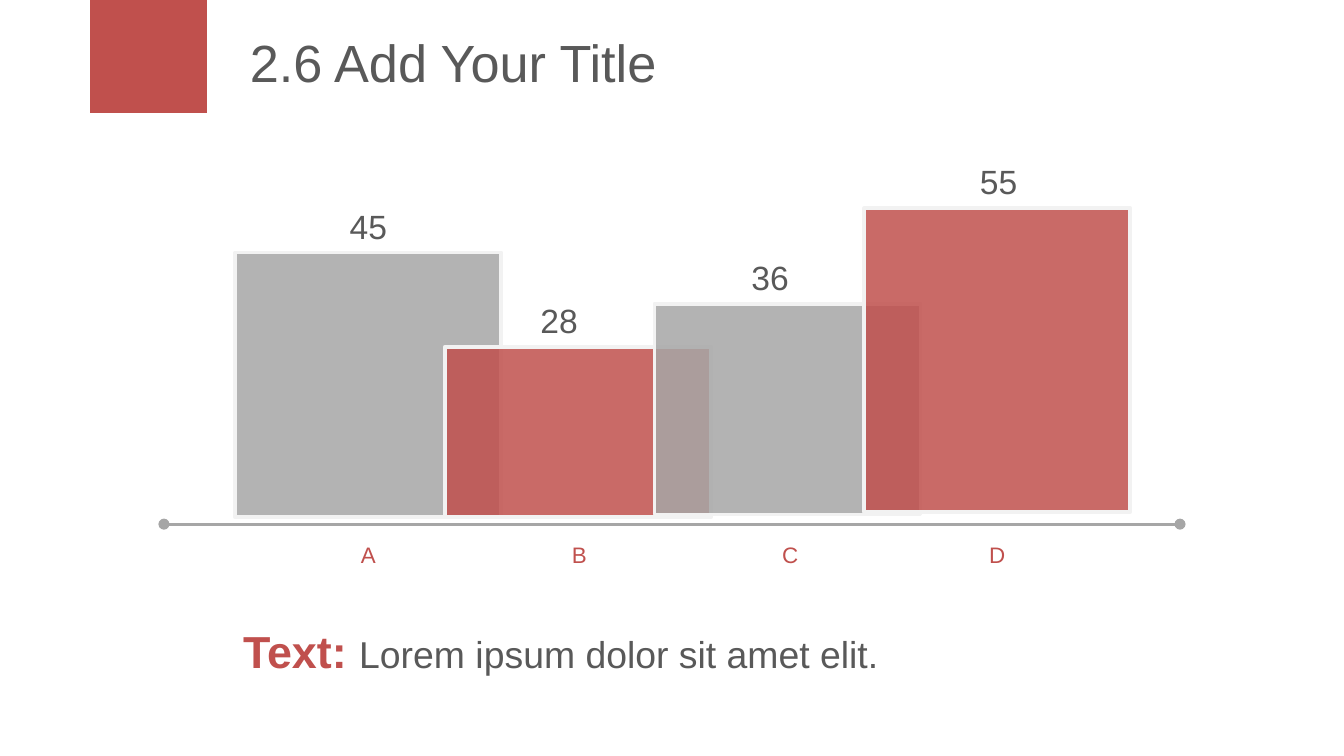
from lxml.etree import SubElement
from pptx import Presentation
from pptx.dml.color import RGBColor
from pptx.enum.shapes import MSO_CONNECTOR, MSO_SHAPE
from pptx.enum.text import MSO_ANCHOR, MSO_AUTO_SIZE, PP_ALIGN
from pptx.oxml.ns import qn
from pptx.util import Inches, Pt

RED = RGBColor(0xC0, 0x50, 0x4D)
GRAY = RGBColor(0xA6, 0xA6, 0xA6)
DARK = RGBColor(0x59, 0x59, 0x59)
PALE = RGBColor(0xF2, 0xF2, 0xF2)

BAR_LEFT, BAR_STEP, BAR_WIDTH = 1.75, 1.56, 1.98
LABEL_WIDTH, LABEL_HEIGHT = 1.08, 0.4
AXIS_Y = 3.9

# letter, letter left, value, value left, bar top, bar height, colour
BARS = [
    ("A", 2.58, "45", 2.2, 1.88, 1.97, GRAY),
    ("B", 4.15, "28", 3.62, 2.58, 1.27, RED),
    ("C", 5.72, "36", 5.19, 2.26, 1.57, GRAY),
    ("D", 7.26, "55", 6.89, 1.55, 2.26, RED),
]


class SlideBuilder:
    font = "Arial"

    def __init__(self, page):
        self.page = page

    def add_run(self, para, text, size, color, bold=False):
        span = para.add_run()
        span.text = text
        span.font.name = self.font
        span.font.size = Pt(size)
        span.font.bold = bold
        span.font.color.rgb = color

    def title(self, text, left, top, width, height):
        box = self.page.shapes.title
        box.left, box.top = Inches(left), Inches(top)
        box.width, box.height = Inches(width), Inches(height)
        box.text_frame.vertical_anchor = MSO_ANCHOR.MIDDLE
        para = box.text_frame.paragraphs[0]
        para.alignment = PP_ALIGN.LEFT
        self.add_run(para, text, 28, DARK)

    def rectangle(self, left, top, width, height, color, opacity=None):
        """Draw a plain block, or a pale-edged one when an opacity in percent is given."""
        box = self.page.shapes.add_shape(
            MSO_SHAPE.RECTANGLE, Inches(left), Inches(top), Inches(width), Inches(height))
        box.shadow.inherit = False
        box.fill.solid()
        box.fill.fore_color.rgb = color
        if opacity is None:
            box.line.fill.background()
            return
        box.line.color.rgb = PALE
        box.line.width = Pt(2)
        fill_color = box._element.spPr.find(qn("a:solidFill"))[0]
        SubElement(fill_color, qn("a:alpha"), val=str(opacity * 1000))

    def axis(self, left, right, y):
        line = self.page.shapes.add_connector(
            MSO_CONNECTOR.STRAIGHT, Inches(left), Inches(y), Inches(right), Inches(y))
        line.line.color.rgb = GRAY
        line.line.width = Pt(1.5)
        outline = line.line._get_or_add_ln()
        for end in ("a:headEnd", "a:tailEnd"):
            SubElement(outline, qn(end), type="oval")
        SubElement(line._element.spPr, qn("a:effectLst"))

    def text(self, runs, left, top, width, height,
             align=PP_ALIGN.CENTER, spacing=None, wrap=True):
        box = self.page.shapes.add_textbox(
            Inches(left), Inches(top), Inches(width), Inches(height))
        frame = box.text_frame
        frame.word_wrap = wrap
        frame.auto_size = MSO_AUTO_SIZE.SHAPE_TO_FIT_TEXT
        para = frame.paragraphs[0]
        para.alignment = align
        para.line_spacing = spacing
        for run in runs:
            self.add_run(para, *run)


def main():
    deck = Presentation()
    deck.slide_width = Inches(10)
    deck.slide_height = deck.slide_width * 9 // 16
    slide = SlideBuilder(deck.slides.add_slide(deck.slide_layouts[5]))

    slide.rectangle(0.67, 0, 0.87, 0.84, RED)
    slide.title("2.6 Add Your Title", 1.76, 0.14, 7.89, 0.63)
    slide.axis(1.22, 8.78, AXIS_Y)
    for index, (letter, letter_left, value, value_left, top, height, color) in enumerate(BARS):
        slide.rectangle(BAR_LEFT + index * BAR_STEP, top, BAR_WIDTH, height, color, opacity=85)
        slide.text([(value, 18, DARK)], value_left, top - LABEL_HEIGHT,
                   LABEL_WIDTH, LABEL_HEIGHT)
        slide.text([(letter, 12, RED)], letter_left, AXIS_Y - 0.02, 0.32, 0.37,
                   spacing=1.5, wrap=False)
    slide.text([("Text: ", 24, RED, True), ("Lorem ipsum dolor sit amet elit.", 20, DARK)],
               1.71, 4.39, 6.85, 0.63, align=PP_ALIGN.LEFT, spacing=1.5)

    deck.save("out.pptx")


if __name__ == "__main__":
    main()
